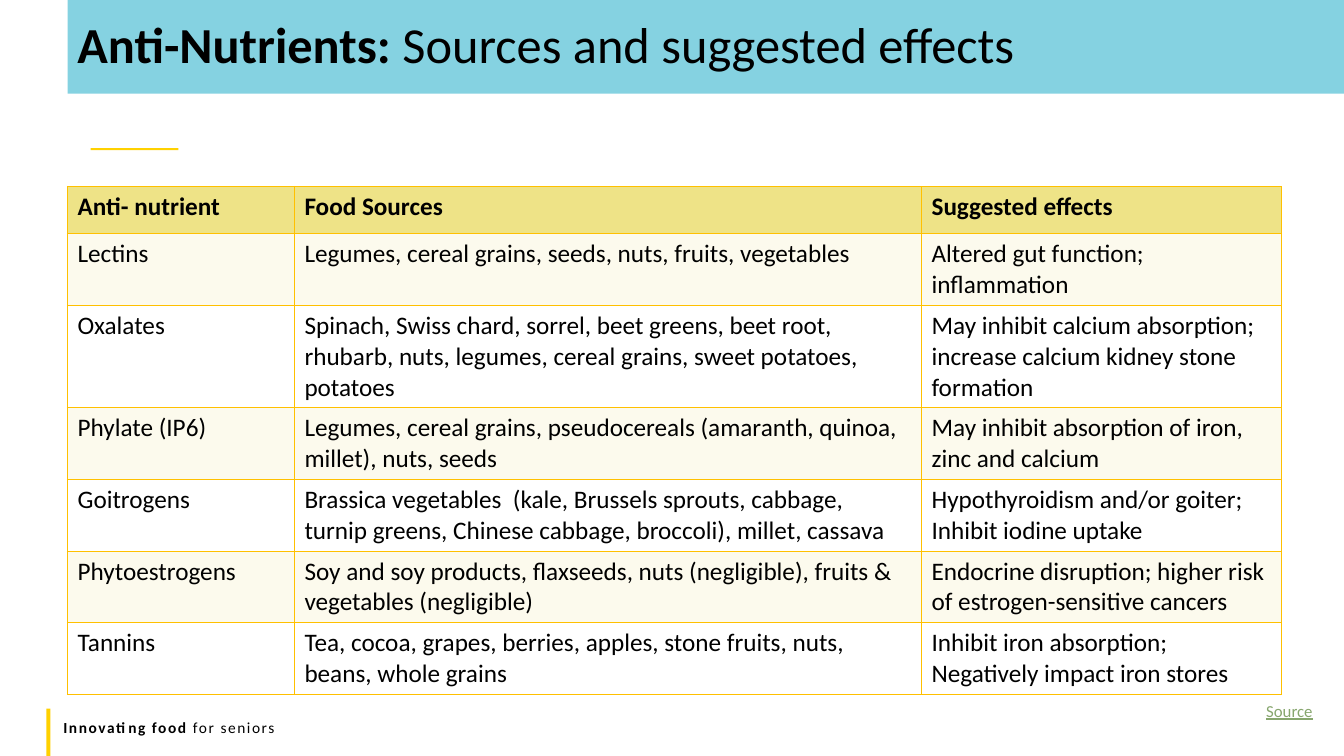
from lxml import etree
from pptx import Presentation
from pptx import util as u
from pptx.dml.color import RGBColor
from pptx.enum import shapes, text
from pptx.oxml import ns

INK = {
    "black": "000000", "white": "FFFFFF", "cream": "FCFAED", "sand": "EEE387",
    "gold": "FFD100", "amber": "FFC000", "aqua": "85D2E1", "green": "87A66E",
}
FONT = "Calibri"
COLS = [2.25, 6.22, 3.57]
HEAD, LINE, PAD = 0.47, 0.3, 0.1
ROWS = [
    ("Anti- nutrient", "Food Sources", "Suggested effects"),
    ("Lectins",
     "Legumes, cereal grains, seeds, nuts, fruits, vegetables",
     "Altered gut function; inflammation"),
    ("Oxalates",
     "Spinach, Swiss chard, sorrel, beet greens, beet root, rhubarb, nuts, "
     "legumes, cereal grains, sweet potatoes, potatoes",
     "May inhibit calcium absorption; increase calcium kidney stone formation"),
    ("Phylate (IP6)",
     "Legumes, cereal grains, pseudocereals (amaranth, quinoa, millet), nuts, seeds",
     "May inhibit absorption of iron, zinc and calcium"),
    ("Goitrogens",
     "Brassica vegetables  (kale, Brussels sprouts, cabbage, turnip greens, "
     "Chinese cabbage, broccoli), millet, cassava",
     "Hypothyroidism and/or goiter; Inhibit iodine uptake"),
    ("Phytoestrogens",
     "Soy and soy products, flaxseeds, nuts (negligible), fruits & vegetables (negligible)",
     "Endocrine disruption; higher risk of estrogen-sensitive cancers"),
    ("Tannins",
     "Tea, cocoa, grapes, berries, apples, stone fruits, nuts, beans, whole grains",
     "Inhibit iron absorption; Negatively impact iron stores"),
]
LINES = [2, 3, 2, 2, 2, 2]


def rgb(name):
    return RGBColor.from_string(INK[name])


def inches(box):
    return [u.Inches(n) for n in box]


def write(para, words, size=18, color="black", bold=False, line=False, gap=None):
    """Add one run of text to a paragraph."""
    run = para.add_run()
    run.text = words
    font = run.font
    font.name, font.size, font.bold = FONT, u.Pt(size), bold
    font.underline = line
    font.color.rgb = rgb(color)
    if gap:
        run._r.get_or_add_rPr().set("spc", str(gap))


def bar(slide, box, color):
    rect = slide.shapes.add_shape(shapes.MSO_SHAPE.RECTANGLE, *inches(box))
    rect.shadow.inherit = False
    rect.fill.solid()
    rect.fill.fore_color.rgb = rgb(color)
    rect.line.fill.background()
    return rect


def label(slide, box, wrap=True):
    frame = slide.shapes.add_textbox(*inches(box)).text_frame
    frame.word_wrap = wrap
    return frame.paragraphs[0]


def border(cell, color, width):
    """Draw all four sides of a cell; lines go ahead of the fill."""
    props = cell._tc.get_or_add_tcPr()
    for spot, side in enumerate(("a:lnL", "a:lnR", "a:lnT", "a:lnB")):
        edge = etree.Element(ns.qn(side), w=str(u.Pt(width)))
        fill = etree.SubElement(edge, ns.qn("a:solidFill"))
        etree.SubElement(fill, ns.qn("a:srgbClr"), val=INK[color])
        props.insert(spot, edge)


def title(slide, box):
    band = bar(slide, box, "aqua")
    frame = band.text_frame
    frame.word_wrap = True
    frame.vertical_anchor = text.MSO_ANCHOR.MIDDLE
    para = frame.paragraphs[0]
    para.alignment = text.PP_ALIGN.LEFT
    para.line_spacing = 0.9
    write(para, "Anti-Nutrients: ", size=36, bold=True)
    write(para, "Sources and suggested effects", size=36)


def grid(slide, left, top):
    highs = [HEAD] + [n * LINE + PAD for n in LINES]
    box = (left, top, sum(COLS), sum(highs))
    table = slide.shapes.add_table(len(ROWS), len(COLS), *inches(box)).table
    for col, wide in zip(table.columns, COLS):
        col.width = u.Inches(wide)
    for r, (words, high) in enumerate(zip(ROWS, highs)):
        table.rows[r].height = u.Inches(high)
        shade = "sand" if r == 0 else "cream" if r % 2 else "white"
        for c, word in enumerate(words):
            cell = table.cell(r, c)
            cell.fill.solid()
            cell.fill.fore_color.rgb = rgb(shade)
            border(cell, "amber", 1)
            write(cell.text_frame.paragraphs[0], word, bold=r == 0)


def footer(slide, left, top):
    bar(slide, (left, top, 0.04, 0.47), "gold")
    para = label(slide, (left + 0.07, top + 0.04, 12, 0.29))
    write(para, "Innovating food ", size=11, bold=True, gap=110)
    write(para, "for seniors", size=11, gap=110)
    note = label(slide, (left + 12, top - 0.13, 0.67, 0.3), wrap=False)
    write(note, "Source", size=12, color="green", line=True)


def main():
    deck = Presentation()
    deck.slide_width, deck.slide_height = u.Inches(13.33), u.Inches(7.5)
    slide = deck.slides.add_slide(deck.slide_layouts[6])
    # Heading band and accent rule
    title(slide, (0.67, 0, 12.66, 0.93))
    bar(slide, (0.9, 1.47, 0.87, 0.02), "gold")
    # Table of anti-nutrients
    grid(slide, 0.67, 1.85)
    # Footer line and source note
    footer(slide, 0.46, 7.03)
    deck.save("out.pptx")


if __name__ == "__main__":
    main()
